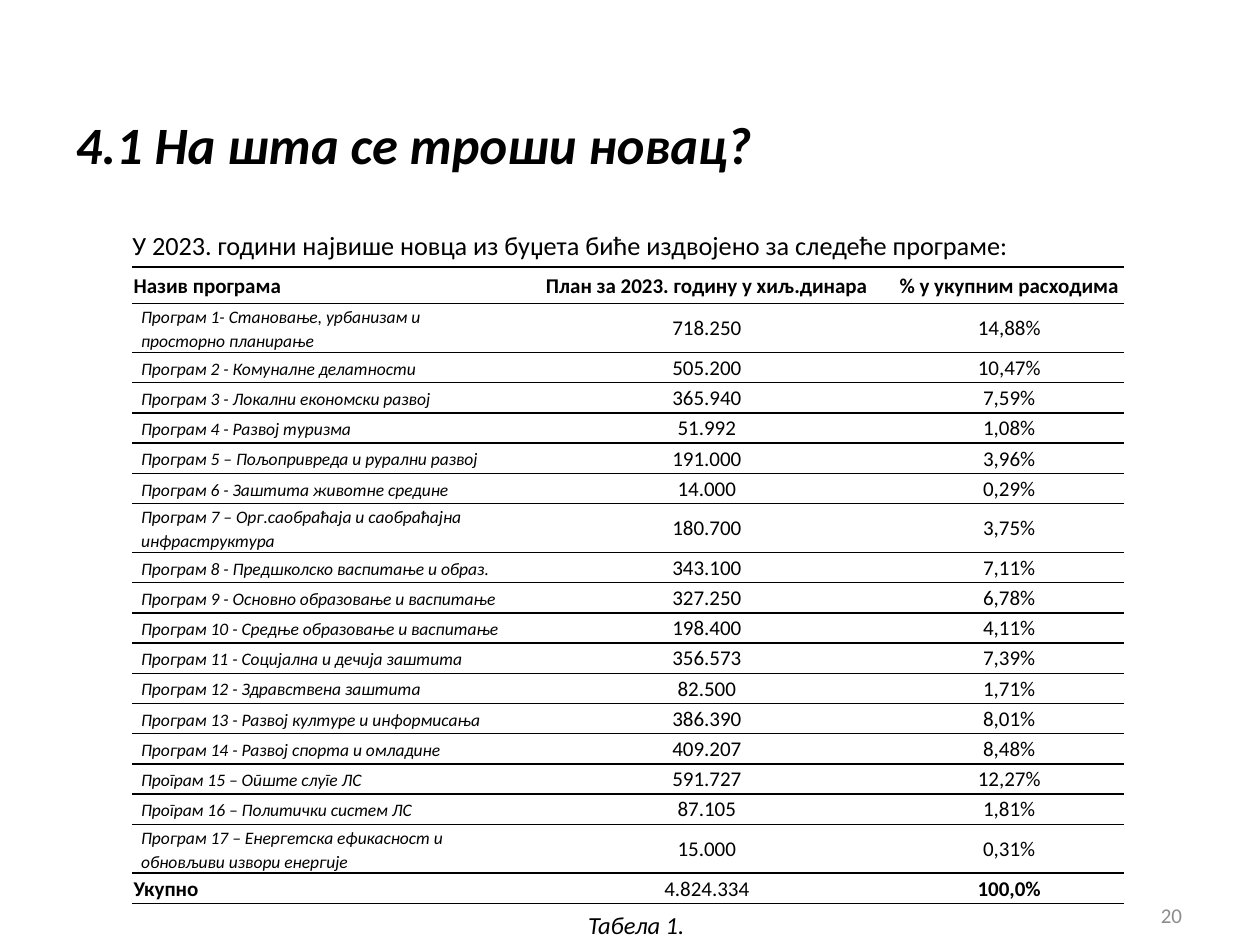
from dataclasses import dataclass

from lxml import etree
from pptx import Presentation
from pptx.dml.color import RGBColor
from pptx.enum.lang import MSO_LANGUAGE_ID
from pptx.enum.text import MSO_ANCHOR, MSO_AUTO_SIZE, PP_ALIGN
from pptx.oxml.ns import qn
from pptx.util import Inches, Pt

LEFT, CENTER, RIGHT, JUSTIFY = PP_ALIGN.LEFT, PP_ALIGN.CENTER, PP_ALIGN.RIGHT, PP_ALIGN.JUSTIFY
TOP, MIDDLE = MSO_ANCHOR.TOP, MSO_ANCHOR.MIDDLE
SERBIAN = MSO_LANGUAGE_ID.SERBIAN_CYRILLIC
GRID_COLUMNS, GRID_ROWS = 100, 75

HEADERS = ["Назив програма", "План за 2023. годину у хиљ.динара", "% у укупним расходима"]
PROGRAMS = [
    ("Програм 1- Становање, урбанизам и просторно планирање", "718.250", "14,88%"),
    ("Програм 2 - Комуналне делатности", "505.200", "10,47%"),
    ("Програм 3 - Локални економски развој", "365.940", "7,59%"),
    ("Програм 4 - Развој туризма", "51.992", "1,08%"),
    ("Програм 5 – Пољопривреда и рурални развој", "191.000", "3,96%"),
    ("Програм 6 - Заштита животне средине", "14.000", "0,29%"),
    ("Програм 7 – Орг.саобраћаја и саобраћајна инфраструктура", "180.700", "3,75%"),
    ("Програм 8 - Предшколско васпитање и образ.", "343.100", "7,11%"),
    ("Програм 9 - Основно образовање и васпитање", "327.250", "6,78%"),
    ("Програм 10 - Средње образовање и васпитање", "198.400", "4,11%"),
    ("Програм 11 - Социјална и дечија заштита", "356.573", "7,39%"),
    ("Програм 12 - Здравствена заштита", "82.500", "1,71%"),
    ("Програм 13 - Развој културе и информисања", "386.390", "8,01%"),
    ("Програм 14 - Развој спорта и омладине", "409.207", "8,48%"),
    ("Програм 15 – Опште слуге ЛС", "591.727", "12,27%"),
    ("Програм 16 – Политички систем ЛС", "87.105", "1,81%"),
    ("Програм 17 – Енергетска ефикасност и обновљиви извори енергије", "15.000", "0,31%"),
]
SERBIAN_ROWS = (15, 16)
TOTAL = ("Укупно", "4.824.334", "100,0%")


@dataclass(frozen=True)
class Theme:
    font: str = "Calibri"
    text: str = "000000"
    muted: str = "8C8C8C"
    title: int = 30
    body: int = 15
    caption: int = 14
    table: int = 12
    program: int = 10
    rule: int = 1


class SlideBuilder:
    def __init__(self, presentation, theme):
        self.theme = theme
        self.column = presentation.slide_width / GRID_COLUMNS
        self.row = presentation.slide_height / GRID_ROWS
        self.slide = presentation.slides.add_slide(presentation.slide_layouts[1])

    def box(self, left, top, width, height):
        return (round(left * self.column), round(top * self.row),
                round(width * self.column), round(height * self.row))

    def set_text(self, frame, text, size, align=LEFT, color=None, spacing=None, **formats):
        frame.text = text
        paragraph = frame.paragraphs[0]
        paragraph.alignment = align
        paragraph.space_before = Pt(0)
        if spacing:
            paragraph.line_spacing = spacing
        font = paragraph.runs[0].font
        values = {"name": self.theme.font, "size": Pt(size), **formats}
        for name, value in values.items():
            setattr(font, name, value)
        font.color.rgb = RGBColor.from_string(color or self.theme.text)
        return paragraph

    def placeholder(self, index, place, text, size, anchor, **formats):
        shape = self.slide.placeholders[index]
        shape.left, shape.top, shape.width, shape.height = self.box(*place)
        frame = shape.text_frame
        frame.auto_size = MSO_AUTO_SIZE.NONE
        frame.vertical_anchor = anchor
        return self.set_text(frame, text, size, **formats)

    def body(self, *arguments, **formats):
        properties = self.placeholder(1, *arguments, **formats)._p.get_or_add_pPr()
        properties.set("marL", "0")
        properties.set("indent", "0")
        etree.SubElement(properties, qn("a:buNone"))

    def text_box(self, place, text, size, anchor=TOP, wrap=True, **formats):
        frame = self.slide.shapes.add_textbox(*self.box(*place)).text_frame
        frame.word_wrap = wrap
        frame.vertical_anchor = anchor
        self.set_text(frame, text, size, **formats)

    def table(self, left, top, widths, heights):
        place = self.box(left, top, sum(widths), sum(heights))
        table = self.slide.shapes.add_table(len(heights), len(widths), *place).table
        table.first_row = table.horz_banding = False
        for column, width in zip(table.columns, widths):
            column.width = round(width * self.column)
        for row, height in zip(table.rows, heights):
            row.height = round(height * self.row)
        return table

    def cell(self, cell, text, size, margins=(0.01, 0.01, 0.01, 0), **formats):
        sides = ("margin_left", "margin_top", "margin_right", "margin_bottom")
        for side, margin in zip(sides, margins):
            setattr(cell, side, Inches(margin))
        cell.vertical_anchor = MIDDLE
        properties = cell._tc.get_or_add_tcPr()
        for side in ("lnL", "lnR"):
            etree.SubElement(etree.SubElement(properties, qn(f"a:{side}")), qn("a:noFill"))
        for side in ("lnT", "lnB"):
            line = etree.SubElement(properties, qn(f"a:{side}"), w=str(Pt(self.theme.rule)))
            fill = etree.SubElement(line, qn("a:solidFill"))
            etree.SubElement(fill, qn("a:srgbClr"), val=self.theme.text)
        cell.fill.background()
        self.set_text(cell.text_frame, text, size, **formats)


def build_budget_table(builder):
    theme = builder.theme
    table = builder.table(10.5, 21.2, [30.7, 29.8, 18.2], [2.9] + [2.4] * (len(PROGRAMS) + 1))
    last = len(PROGRAMS) + 1
    for row, values in enumerate([HEADERS, *PROGRAMS, TOTAL]):
        for column, text in enumerate(values):
            formats = {"size": theme.table, "align": CENTER if column else LEFT,
                       "bold": row == 0 or (row == last and column != 1)}
            if column == 0 and 0 < row < last:
                formats.update(size=theme.program, italic=True, spacing=1.15,
                               margins=(0.07, 0, 0.1, 0))
                if row in SERBIAN_ROWS:
                    formats["language_id"] = SERBIAN
            builder.cell(table.cell(row, column), text, **formats)


def main():
    presentation = Presentation()
    presentation.slide_width, presentation.slide_height = Inches(10), Inches(7.5)
    theme = Theme()
    builder = SlideBuilder(presentation, theme)
    builder.placeholder(0, (5, 6.2, 72.7, 10.4), "4.1 На шта се троши новац?",
                        theme.title, MIDDLE, bold=True, italic=True)
    builder.body((9.5, 17.7, 80.6, 7.9),
                 "У 2023. години највише новца из буџета биће издвојено за следеће програме:",
                 theme.body, TOP, align=JUSTIFY)
    build_budget_table(builder)
    builder.text_box((45.7, 71.7, 10.4, 3.4), "Табела 1.", theme.caption,
                     wrap=False, italic=True)
    builder.text_box((71.5, 70.6, 23.3, 4), "20", theme.table, MIDDLE,
                     align=RIGHT, color=theme.muted)
    presentation.save("out.pptx")


if __name__ == "__main__":
    main()
